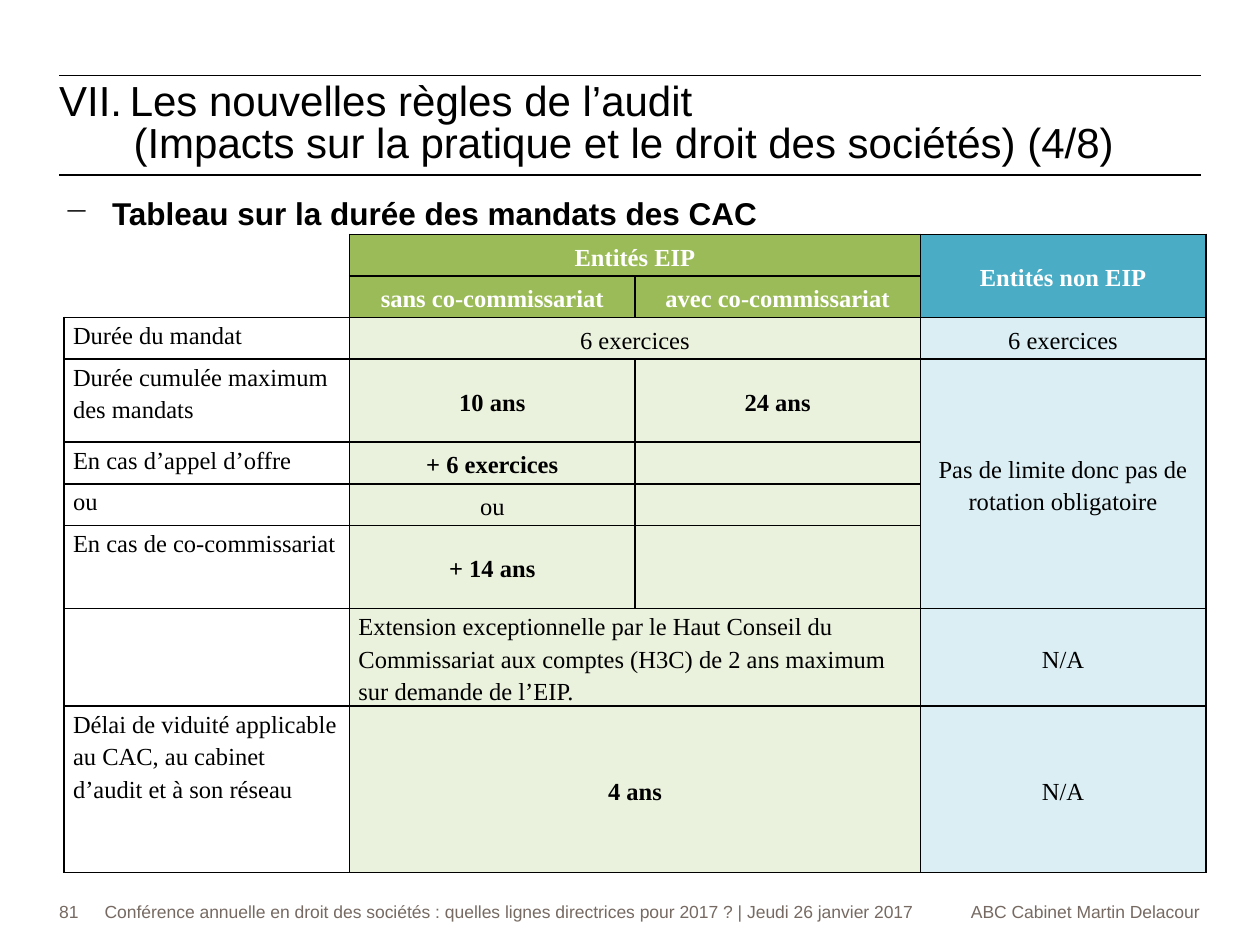
from lxml import etree
from pptx import Presentation
from pptx.dml.color import RGBColor
from pptx.enum.shapes import MSO_CONNECTOR
from pptx.enum.text import MSO_ANCHOR, MSO_AUTO_SIZE, PP_ALIGN
from pptx.oxml.ns import qn
from pptx.util import Inches, Pt

BLACK = RGBColor(0x00, 0x00, 0x00)
WHITE = RGBColor(0xFF, 0xFF, 0xFF)
TAUPE = RGBColor(0x76, 0x6A, 0x62)
GREEN = RGBColor(0x9B, 0xBB, 0x59)
BLUE = RGBColor(0x4B, 0xAC, 0xC6)
PALE_GREEN = RGBColor(0xEA, 0xF1, 0xDD)
PALE_BLUE = RGBColor(0xDA, 0xEE, 0xF3)

LEFT, CENTER, RIGHT = PP_ALIGN.LEFT, PP_ALIGN.CENTER, PP_ALIGN.RIGHT
TOP, MIDDLE = MSO_ANCHOR.TOP, MSO_ANCHOR.MIDDLE
STRAIGHT = MSO_CONNECTOR.STRAIGHT
NO_FIT = MSO_AUTO_SIZE.NONE

# Page grid, in inches
MARGIN, CONTENT_WIDTH = 0.47, 9.06
TITLE_TOP, TITLE_BOTTOM = 0.6, 1.39
FOOTER_TOP, FOOTER_HEIGHT = 7.15, 0.28
TABLE_LEFT, TABLE_TOP = 0.51, 1.86
ROW = 0.33
ROW_UNITS = [1, 1, 1, 2, 1, 1, 2, 2, 4]

# Table content; cells covered by a merge stay empty
ROWS = [
    ["", "Entités EIP", "", "Entités non EIP"],
    ["", "sans co-commissariat", "avec co-commissariat", ""],
    ["Durée du mandat", "6 exercices", "", "6 exercices"],
    ["Durée cumulée maximum des mandats", "10 ans", "24 ans",
     "Pas de limite donc pas de rotation obligatoire"],
    ["En cas d’appel d’offre", "+ 6 exercices", "", ""],
    ["ou", "ou", "", ""],
    ["En cas de co-commissariat", "+ 14 ans", "", ""],
    ["", "Extension exceptionnelle par le Haut Conseil du Commissariat aux "
     "comptes (H3C) de 2 ans maximum sur demande de l’EIP.", "", "N/A"],
    ["Délai de viduité applicable au CAC, au cabinet d’audit et à son réseau",
     "4 ans", "", "N/A"],
]
MERGES = [((0, 1), (0, 2)), ((0, 3), (1, 3)), ((2, 1), (2, 2)),
          ((3, 3), (6, 3)), ((7, 1), (7, 2)), ((8, 1), (8, 2))]
HEADER_ROWS = 2
EXTENSION_ROW = 7
BOLD_ROWS = {0, 1, 3, 4, 6, 8}


class SlideBuilder:
    """Holds the shared style and the slide being filled."""

    font, table_font = "Arial", "Times New Roman"

    def __init__(self, deck):
        self.slide = deck.slides.add_slide(deck.slide_layouts[5])

    def place(self, box, left, top, width, height):
        box.left, box.top = Inches(left), Inches(top)
        box.width, box.height = Inches(width), Inches(height)

    def frame(self, box, anchor=TOP):
        frame = box.text_frame
        frame.margin_left = frame.margin_right = 0
        frame.margin_top = frame.margin_bottom = 0
        frame.word_wrap, frame.auto_size = True, NO_FIT
        frame.vertical_anchor = anchor
        return frame

    def style(self, para, size, color, align=LEFT, bold=False, name=font):
        para.alignment = align
        font = para.font
        font.name, font.size, font.bold = name, Pt(size), bold
        font.color.rgb = color

    def hang(self, para, indent, tag=None, **attributes):
        """Hanging indent, with a bullet or number when a tag is given."""
        props = para._p.get_or_add_pPr()
        props.set("marL", str(Inches(indent)))
        props.set("indent", str(-Inches(indent)))
        bullet = etree.Element(qn(tag or "a:buNone"), attributes)
        props.insert_element_before(bullet, "a:tabLst", "a:defRPr", "a:extLst")

    def rule(self, top):
        line = self.slide.shapes.add_connector(
            STRAIGHT, Inches(MARGIN), Inches(top),
            Inches(MARGIN + CONTENT_WIDTH), Inches(top))
        line.line.color.rgb, line.line.width = BLACK, Pt(1)
        etree.SubElement(line._element.spPr, qn("a:effectLst"))

    def title(self, heading, detail):
        box = self.slide.shapes.title
        self.place(box, MARGIN, TITLE_TOP, CONTENT_WIDTH,
                   TITLE_BOTTOM - TITLE_TOP)
        frame = self.frame(box, MIDDLE)
        frame.text = f"{heading}\n\t{detail}"
        for para in frame.paragraphs:
            self.style(para, 24, BLACK)
            para.line_spacing = Pt(24)
        first, second = frame.paragraphs
        self.hang(first, 0.56, "a:buAutoNum", type="romanUcPeriod", startAt="7")
        self.hang(second, 0.59)

    def text(self, text, left, top, width, height, size, color, **style):
        box = self.slide.shapes.add_textbox(0, 0, 0, 0)
        self.place(box, left, top, width, height)
        para = self.frame(box).paragraphs[0]
        para.text = text
        self.style(para, size, color, **style)
        return para

    def footer(self, text, left, width, align=LEFT):
        self.text(text, left, FOOTER_TOP, width, FOOTER_HEIGHT, 10, TAUPE,
                  align=align)

    def borders(self, cell, sides):
        props = cell._tc.get_or_add_tcPr()
        for side in "LRTB":
            line = etree.SubElement(props, qn(f"a:ln{side}"), w=str(Pt(1)))
            if side in sides:
                fill = etree.SubElement(line, qn("a:solidFill"))
                etree.SubElement(fill, qn("a:srgbClr"), val=str(BLACK))
            else:
                etree.SubElement(line, qn("a:noFill"))

    def cell(self, cell, text, fill, color, align, anchor, bold, sides):
        self.borders(cell, sides)
        if fill is None:
            cell.fill.background()
        else:
            cell.fill.solid()
            cell.fill.fore_color.rgb = fill
        cell.margin_left = cell.margin_right = Inches(0.07)
        cell.margin_top = cell.margin_bottom = 0
        cell.vertical_anchor = anchor
        para = cell.text_frame.paragraphs[0]
        para.line_spacing = 1.2
        para.space_before = para.space_after = Pt(3)
        self.style(para, 14, color, align, bold, self.table_font)
        if text:
            para.text = text
        else:  # keeps empty rows from growing
            etree.SubElement(para._p, qn("a:endParaRPr"), sz="1400")

    def table(self):
        count = len(ROWS[0])
        table = self.slide.shapes.add_table(
            len(ROWS), count, Inches(TABLE_LEFT), Inches(TABLE_TOP),
            Inches(CONTENT_WIDTH), Inches(ROW * sum(ROW_UNITS))).table
        table.first_row = table.horz_banding = False
        for row, units in zip(table.rows, ROW_UNITS):
            row.height = Inches(ROW * units)
        for r, texts in enumerate(ROWS):
            header = r < HEADER_ROWS
            for c, text in enumerate(texts):
                label, last = c == 0, c == count - 1
                fill = (None if label else
                        (BLUE if header else PALE_BLUE) if last else
                        (GREEN if header else PALE_GREEN))
                sides = "LRTB"
                if header and label:  # open corner
                    sides = "RB" if r == HEADER_ROWS - 1 else "R"
                self.cell(
                    table.cell(r, c), text, fill, WHITE if header else BLACK,
                    LEFT if label or (r == EXTENSION_ROW and not last)
                    else CENTER,
                    TOP if label else MIDDLE,
                    header or (r in BOLD_ROWS and not label and not last),
                    sides)
        for start, end in MERGES:
            table.cell(*start).merge(table.cell(*end))


def main():
    deck = Presentation()
    deck.slide_width, deck.slide_height = Inches(10), Inches(7.5)
    page = SlideBuilder(deck)

    # Title between two rules
    page.rule(TITLE_TOP)
    page.rule(TITLE_BOTTOM)
    page.title("Les nouvelles règles de l’audit",
               "(Impacts sur la pratique et le droit des sociétés) (4/8)")

    # Subheading and table
    para = page.text("Tableau sur la durée des mandats des CAC", TABLE_LEFT,
                     1.54, CONTENT_WIDTH, ROW, 18, BLACK, bold=True)
    para.space_before = Pt(4.3)
    page.hang(para, 0.38, "a:buChar", char="−")
    page.table()

    # Footer
    page.footer("81", MARGIN, 0.35)
    page.footer("Conférence annuelle en droit des sociétés : quelles lignes "
                "directrices pour 2017 ? | Jeudi 26 janvier 2017", 0.83, 6.69)
    page.footer("ABC Cabinet Martin Delacour", 5, 4.52, RIGHT)

    deck.save("out.pptx")


if __name__ == "__main__":
    main()
